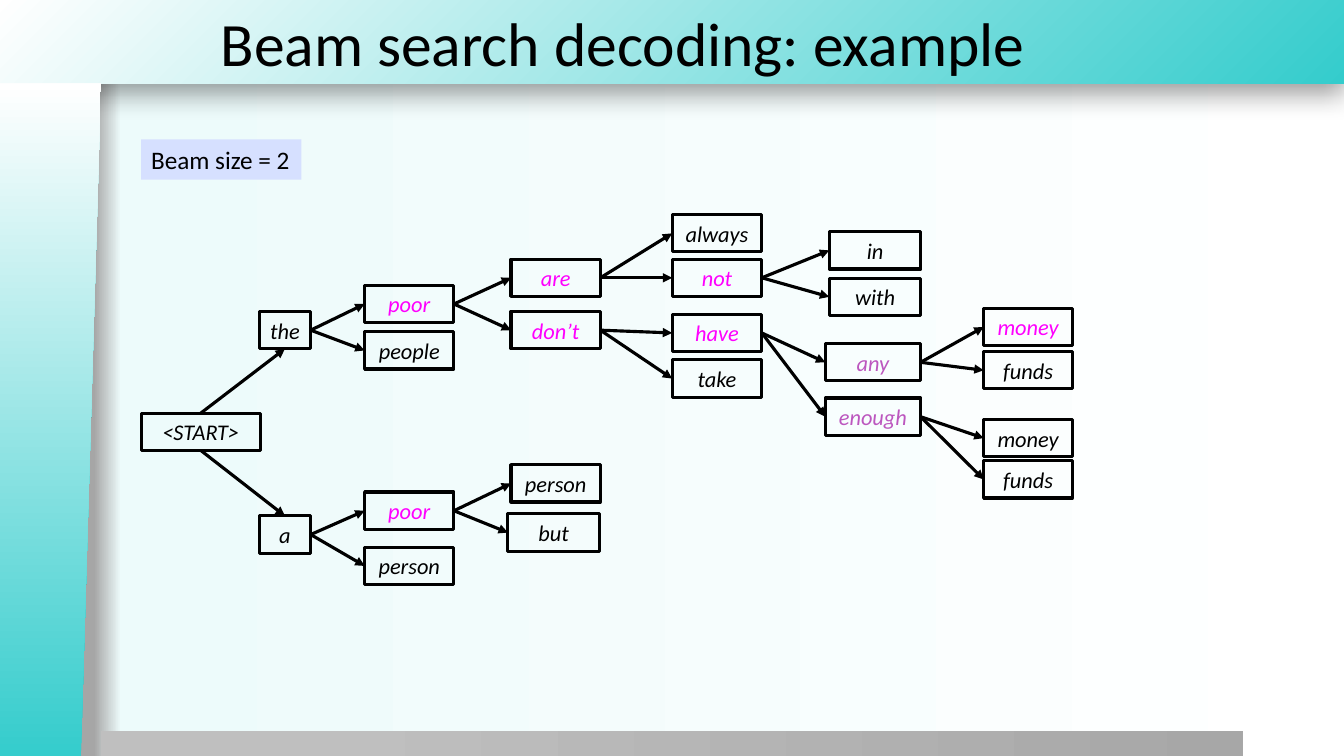
from dataclasses import dataclass

import lxml.etree
import pptx
import pptx.dml.color
import pptx.enum.shapes
import pptx.enum.text
import pptx.oxml.ns
import pptx.util
from pptx.util import Cm

qn = pptx.oxml.ns.qn
Shapes = pptx.enum.shapes.MSO_SHAPE


@dataclass(frozen=True)
class Theme:
    """Colours, font and type sizes of the slide."""
    font: str = "Calibri"
    ink: str = "000000"
    kept: str = "FF00FF"
    candidate: str = "BC57BF"
    label: str = "D6E0FF"
    teal: str = "34CCCC"
    white: str = "FFFFFF"
    title_size: int = 44
    label_size: int = 18
    word_size: int = 16
    line_width: float = 2.25


THEME = Theme()
BACKGROUND = [(7, "A6A6A6"), (9, "EDFBFB"), (100, THEME.white)]
FOOTER = [(20, "BFBFBF"), (100, "A7A7A7")]
BOX_HEIGHT = 0.94

COLUMNS = {
    "start": (3.56, 3.0),
    "first": (6.53, 1.3),
    "second": (9.19, 2.25),
    "third": (12.88, 2.25),
    "third wide": (12.8, 2.31),
    "fourth": (16.94, 2.26),
    "fifth": (20.9, 2.31),
    "fifth wide": (20.8, 2.4),
    "sixth": (24.79, 2.24),
}

# key: (word, column, top, colour, parent)
HYPOTHESES = {
    "start": ("<START>", "start", 10.41, THEME.ink, None),
    "the": ("the", "first", 7.85, THEME.ink, "start"),
    "a": ("a", "first", 13.0, THEME.ink, "start"),
    "the poor": ("poor", "second", 7.19, THEME.kept, "the"),
    "the people": ("people", "second", 8.36, THEME.ink, "the"),
    "a poor": ("poor", "second", 12.4, THEME.kept, "a"),
    "a person": ("person", "second", 13.79, THEME.ink, "a"),
    "are": ("are", "third", 6.53, THEME.kept, "the poor"),
    "don't": ("don’t", "third", 7.85, THEME.kept, "the poor"),
    "poor person": ("person", "third", 11.71, THEME.ink, "a poor"),
    "but": ("but", "third wide", 12.95, THEME.ink, "a poor"),
    "always": ("always", "fourth", 5.41, THEME.ink, "are"),
    "not": ("not", "fourth", 6.53, THEME.kept, "are"),
    "have": ("have", "fourth", 7.92, THEME.kept, "don't"),
    "take": ("take", "fourth", 9.07, THEME.ink, "don't"),
    "in": ("in", "fifth", 5.84, THEME.ink, "not"),
    "with": ("with", "fifth", 7.01, THEME.ink, "not"),
    "any": ("any", "fifth wide", 8.66, THEME.candidate, "have"),
    "enough": ("enough", "fifth wide", 10.03, THEME.candidate, "have"),
    "any money": ("money", "sixth", 7.77, THEME.kept, "any"),
    "any funds": ("funds", "sixth", 8.86, THEME.ink, "any"),
    "enough money": ("money", "sixth", 10.57, THEME.ink, "enough"),
    "enough funds": ("funds", "sixth", 11.61, THEME.ink, "enough"),
}

TOP, LEFT, BOTTOM, RIGHT = range(4)
START_SITES = {"the": (TOP, BOTTOM), "a": (BOTTOM, TOP)}


def rgb(colour):
    """Return a colour object for a hex string."""
    return pptx.dml.color.RGBColor.from_string(colour)


def add_child(parent, tag, **attributes):
    """Append a drawing element with attributes."""
    child = lxml.etree.SubElement(parent, qn(tag))
    for name, value in attributes.items():
        child.set(name, str(value))
    return child


def set_gradient(fill, owner, stops, corner=False):
    """Fill with percentage stops, left to right or from the bottom right corner."""
    fill.gradient()
    gradient = owner.find(".//" + qn("a:gradFill"))
    for child in list(gradient):
        gradient.remove(child)
    stop_list = add_child(gradient, "a:gsLst")
    for position, colour in stops:
        stop = add_child(stop_list, "a:gs", pos=position * 1000)
        add_child(stop, "a:srgbClr", val=colour)
    if corner:
        direction = add_child(gradient, "a:path", path="circle")
        add_child(direction, "a:fillToRect", l=100000, t=100000)
    else:
        add_child(gradient, "a:lin", ang=0, scaled=0)


def add_band(slide, kind, left, top, width, height, stops, corner=False):
    """Add a borderless decorative shape with a gradient."""
    shape = slide.shapes.add_shape(kind, Cm(left), Cm(top), Cm(width), Cm(height))
    shape.shadow.inherit = False
    shape.line.fill.background()
    set_gradient(shape.fill, shape.element, stops, corner)
    return shape


def add_shadow(shape):
    """Give a shape a soft shadow below it."""
    effects = shape.element.find(".//" + qn("a:effectLst"))
    shadow = add_child(effects, "a:outerShdw", blurRad=pptx.util.Pt(20),
                       dist=pptx.util.Pt(6), dir=5400000, rotWithShape=0)
    colour = add_child(shadow, "a:srgbClr", val=THEME.ink)
    add_child(colour, "a:alpha", val=40000)


def write_text(shape, text, size, colour=THEME.ink, italic=False, centred=False, wrap=False):
    """Write one vertically centred paragraph in a shape."""
    frame = shape.text_frame
    frame.word_wrap = wrap
    frame.vertical_anchor = pptx.enum.text.MSO_ANCHOR.MIDDLE
    paragraph = frame.paragraphs[0]
    paragraph.text = text
    alignment = pptx.enum.text.PP_ALIGN
    paragraph.alignment = alignment.CENTER if centred else alignment.LEFT
    paragraph.font.name = THEME.font
    paragraph.font.size = pptx.util.Pt(size)
    paragraph.font.italic = italic
    paragraph.font.color.rgb = rgb(colour)


def style_line(line):
    """Apply the outline used by boxes and arrows."""
    line.color.rgb = rgb(THEME.ink)
    line.width = pptx.util.Pt(THEME.line_width)


def add_word(slide, word, column, top, colour):
    """Add the outlined box of one hypothesis word."""
    left, width = COLUMNS[column]
    shape = slide.shapes.add_shape(Shapes.RECTANGLE, Cm(left), Cm(top), Cm(width), Cm(BOX_HEIGHT))
    shape.shadow.inherit = False
    shape.fill.background()
    style_line(shape.line)
    write_text(shape, word, THEME.word_size, colour, italic=True, centred=True)
    return shape


def add_arrow(slide, parent, child, sites):
    """Connect a word to its continuation with an arrow."""
    arrow = slide.shapes.add_connector(pptx.enum.shapes.MSO_CONNECTOR.STRAIGHT, 0, 0, 0, 0)
    arrow.begin_connect(parent, sites[0])
    arrow.end_connect(child, sites[1])
    style_line(arrow.line)
    add_child(arrow.element.find(".//" + qn("a:ln")), "a:tailEnd", type="triangle")
    add_child(arrow.element.find(qn("p:spPr")), "a:effectLst")


def add_backdrop(slide):
    """Draw the background, header, footer and side band."""
    set_gradient(slide.background.fill, slide.element, BACKGROUND)
    teal_to_white = [(0, THEME.teal), (100, THEME.white)]
    header = add_band(slide, Shapes.RECTANGLE, 0, 0, 33.87, 2.11, teal_to_white, corner=True)
    add_shadow(header)
    add_band(slide, Shapes.RECTANGLE, 2.54, 18.42, 28.78, 0.66, FOOTER)
    side = add_band(slide, Shapes.FLOWCHART_MANUAL_INPUT, -7.21, 9.32, 16.97, 2.54, teal_to_white)
    side.rotation = 270
    side.element.find(".//" + qn("a:xfrm")).set("flipV", "1")


def main():
    """Build and save the beam search slide."""
    presentation = pptx.Presentation()
    presentation.slide_width, presentation.slide_height = Cm(33.87), Cm(19.05)
    slide = presentation.slides.add_slide(presentation.slide_layouts[6])
    add_backdrop(slide)
    title = slide.shapes.add_textbox(Cm(5.31), 0, Cm(28.56), Cm(2.11))
    write_text(title, "Beam search decoding: example", THEME.title_size, wrap=True)
    boxes = {key: add_word(slide, *entry[:4]) for key, entry in HYPOTHESES.items()}
    for key, entry in HYPOTHESES.items():
        if entry[4]:
            add_arrow(slide, boxes[entry[4]], boxes[key], START_SITES.get(key, (RIGHT, LEFT)))
    label = slide.shapes.add_textbox(Cm(3.56), Cm(3.51), Cm(4.04), Cm(1.02))
    label.fill.solid()
    label.fill.fore_color.rgb = rgb(THEME.label)
    write_text(label, "Beam size = 2", THEME.label_size)
    presentation.save("out.pptx")


if __name__ == "__main__":
    main()
